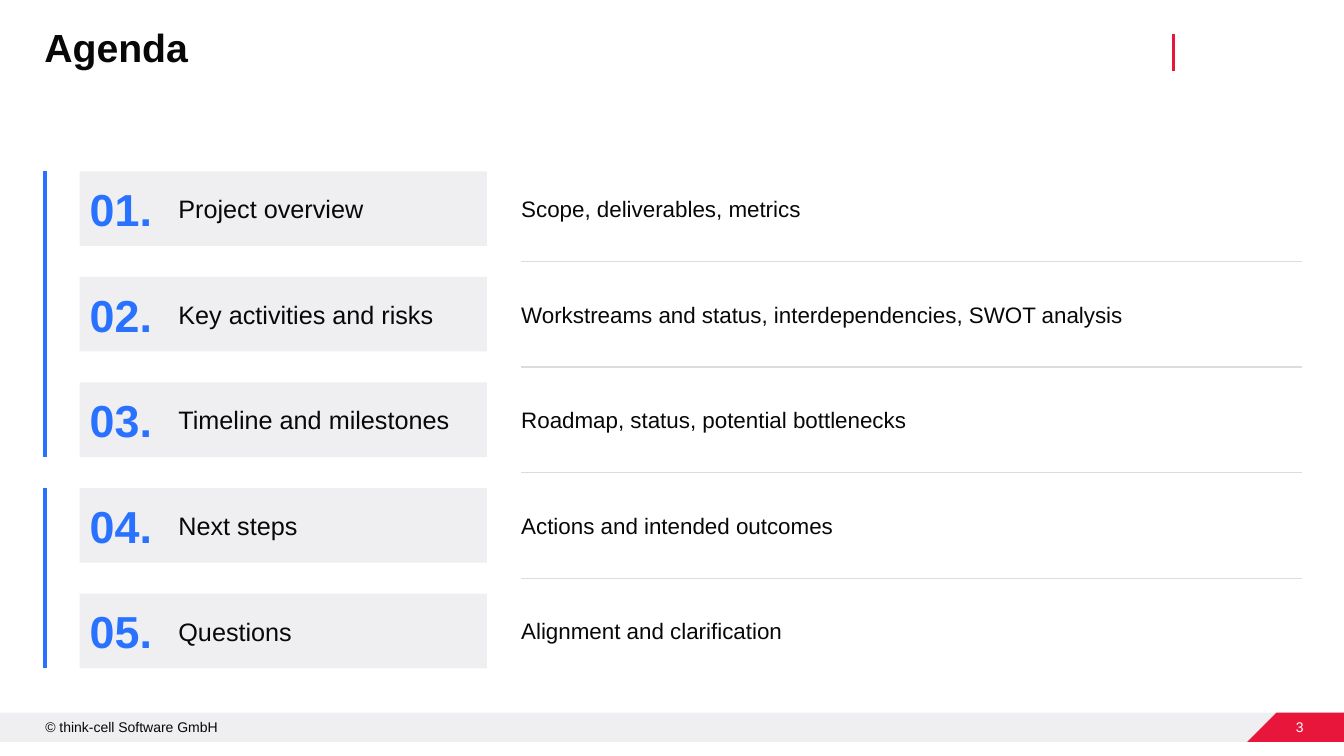
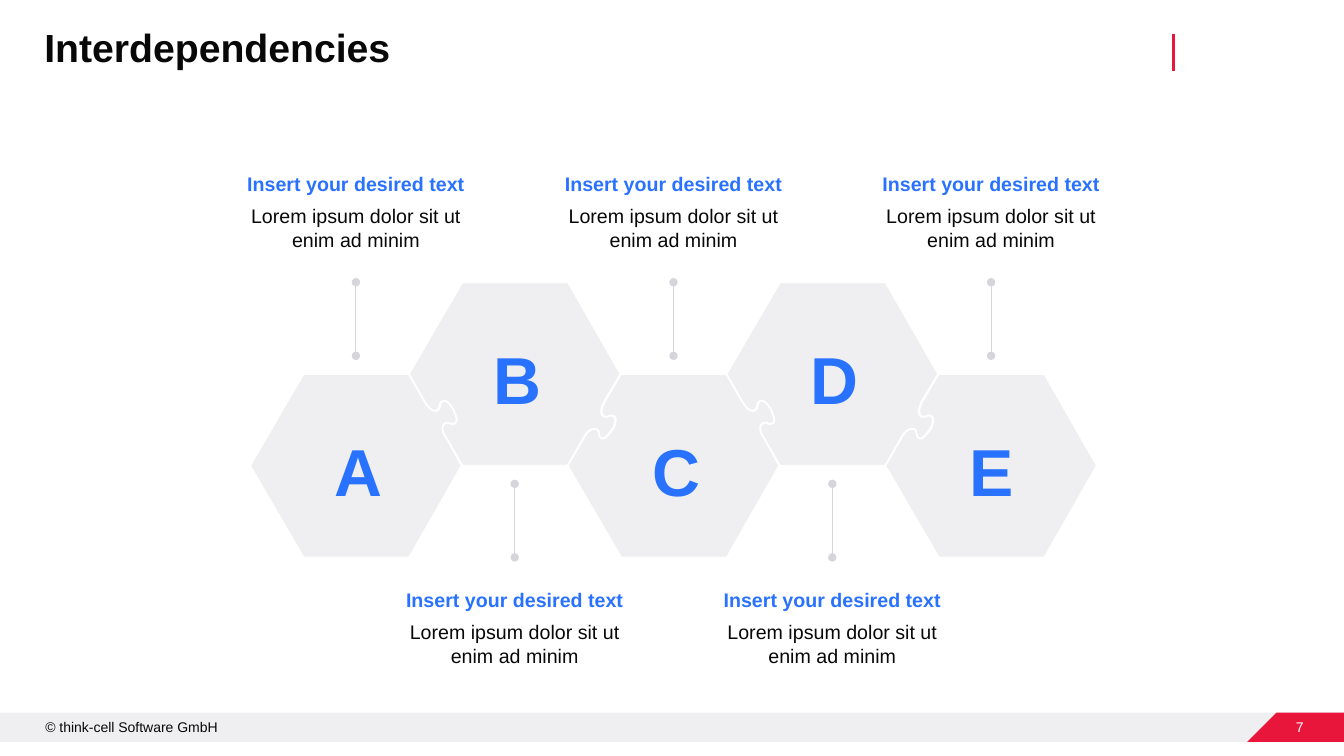
from pptx import Presentation
from pptx.dml.color import RGBColor
from pptx.enum.shapes import MSO_CONNECTOR as Link, MSO_SHAPE as Preset
from pptx.enum.text import MSO_ANCHOR as Anchor, PP_ALIGN as Align
from pptx.oxml.ns import qn
from pptx.util import Inches, Pt
from lxml.etree import SubElement

COLORS = {
    "ink": "080808",
    "blue": "2972FF",
    "red": "E9163C",
    "panel": "EFEFF1",
    "rule": "DCDCDC",
    "pin": "D5D5DB",
    "white": "FFFFFF",
}
FONT = "Arial"
WIDTH, HEIGHT = 13.33, 7.5
NO_INSETS = (0, 0, 0, 0)


def rgb(name):
    return RGBColor.from_string(COLORS[name])


class Deck:
    def __init__(self):
        self.prs = Presentation()
        self.prs.slide_width = Inches(WIDTH)
        self.prs.slide_height = Inches(HEIGHT)
        self.slide = None

    def new_slide(self, title, number):
        self.slide = self.prs.slides.add_slide(self.prs.slide_layouts[6])
        self.panel(0, 7.07, WIDTH, 0.29)
        copyright_line = self.text(0.45, 7.13, 2.46, 0.17)
        self.paragraph(copyright_line, "© think-cell Software GmbH", 10)
        self.line((11.64, 0.34), (11.64, 0.7), "red", 2.25)
        self.outline([(12.66, 7.07), (WIDTH, 7.07), (WIDTH, 7.36), (12.37, 7.36)], "red")
        page = self.text(12.76, 7.13, 0.17, 0.17, Anchor.MIDDLE, wrap=False)
        self.paragraph(page, number, 10, "white", align=Align.RIGHT)
        heading = self.text(0.44, 0.28, 11.03, 0.42)
        self.paragraph(heading, title, 28, bold=True, spacing=0.9)

    def paint(self, shape, fill, edge=None, weight=0):
        shape.shadow.inherit = False
        shape.fill.solid()
        shape.fill.fore_color.rgb = rgb(fill)
        if edge:
            shape.line.color.rgb = rgb(edge)
            shape.line.width = Pt(weight)
        else:
            shape.line.fill.background()

    def frame(self, shape, anchor, insets, wrap=True):
        frame = shape.text_frame
        frame.word_wrap = wrap
        frame.vertical_anchor = anchor
        (frame.margin_left, frame.margin_top,
         frame.margin_right, frame.margin_bottom) = map(Inches, insets)
        return frame

    def panel(self, x, y, w, h, insets=NO_INSETS):
        box = self.slide.shapes.add_shape(
            Preset.RECTANGLE, Inches(x), Inches(y), Inches(w), Inches(h))
        self.paint(box, "panel")
        return self.frame(box, Anchor.MIDDLE, insets)

    def text(self, x, y, w, h, anchor=Anchor.TOP, insets=NO_INSETS, wrap=True):
        box = self.slide.shapes.add_textbox(
            Inches(x), Inches(y), Inches(w), Inches(h))
        return self.frame(box, anchor, insets, wrap)

    def paragraph(self, frame, words, size, color="ink", bold=False, align=Align.LEFT,
                  spacing=None, after=None, tracking=None):
        first = frame.paragraphs[0]
        paragraph = frame.add_paragraph() if first.runs else first
        paragraph.alignment = align
        if spacing:
            paragraph.line_spacing = spacing
        if after:
            paragraph.space_after = Pt(after)
        run = paragraph.add_run()
        run.text = words
        run.font.name = FONT
        run.font.size = Pt(size)
        run.font.bold = bold
        run.font.color.rgb = rgb(color)
        if tracking:
            run.font._element.set("spc", str(round(tracking * 100)))

    def line(self, start, end, color, weight, dots=False):
        link = self.slide.shapes.add_connector(
            Link.STRAIGHT, *map(Inches, start + end))
        link.line.color.rgb = rgb(color)
        link.line.width = Pt(weight)
        if dots:
            stroke = link.line._get_or_add_ln()
            for tip in ("a:headEnd", "a:tailEnd"):
                SubElement(stroke, qn(tip), type="oval")
        SubElement(link._element.spPr, qn("a:effectLst"))

    def outline(self, points, fill, edge=None, weight=0):
        corners = [(Inches(x), Inches(y)) for x, y in points]
        builder = self.slide.shapes.build_freeform(*corners[0])
        builder.add_line_segments(corners[1:], close=True)
        self.paint(builder.convert_to_shape(), fill, edge, weight)


AGENDA = [
    ("Project overview", "Scope, deliverables, metrics"),
    ("Key activities and risks", "Workstreams and status, interdependencies, SWOT analysis"),
    ("Timeline and milestones", "Roadmap, status, potential bottlenecks"),
    ("Next steps", "Actions and intended outcomes"),
    ("Questions", "Alignment and clarification"),
]
ROW_TOP, ROW_HEIGHT, ROW_PITCH = 1.7, 0.74, 4.19 / 4
TOPIC_GROUPS = [(0, 2), (3, 4)]


def agenda(deck):
    deck.new_slide("Agenda", "3")
    for first, last in TOPIC_GROUPS:
        deck.line((0.45, ROW_TOP + first * ROW_PITCH),
                  (0.45, ROW_TOP + last * ROW_PITCH + ROW_HEIGHT), "blue", 3)
    for index, (topic, details) in enumerate(AGENDA):
        top = ROW_TOP + index * ROW_PITCH
        card = deck.panel(0.79, top, 4.04, ROW_HEIGHT, (0.98, 0.08, 0.24, 0.08))
        deck.paragraph(card, topic, 18)
        number = deck.text(0.89, top + (ROW_HEIGHT - 0.57) / 2, 0.73, 0.57, Anchor.MIDDLE)
        deck.paragraph(number, f"{index + 1:02}.", 32, "blue", bold=True)
        deck.paragraph(deck.text(5.17, top, 7.74, ROW_HEIGHT, Anchor.MIDDLE), details, 16)
        if index:
            rule = top - (ROW_PITCH - ROW_HEIGHT) / 2
            deck.line((5.17, rule), (12.91, rule), "rule", 0.75)


HEXAGON = [(0.53, 0), (1.58, 0), (2.1, 0.91), (1.58, 1.82), (0.53, 1.82), (0, 0.91)]
TILE_LEFT, TILE_PITCH = 2.48, 3.15 / 2
TILE_CENTER = 1.05
FALLING_KNOB = [
    (0.16, 0.28), (0.2, 0.34), (0.24, 0.38), (0.28, 0.36),
    (0.32, 0.33), (0.29, 0.3), (0.33, 0.27),
    (0.38, 0.24), (0.44, 0.35), (0.44, 0.35),
    (0.45, 0.38), (0.5, 0.46), (0.46, 0.49),
    (0.41, 0.51), (0.4, 0.47), (0.36, 0.49),
    (0.32, 0.51), (0.33, 0.58), (0.37, 0.63),
]
RISING_KNOB = [
    (-0.16, 0.27), (-0.19, 0.33), (-0.21, 0.39), (-0.17, 0.42),
    (-0.12, 0.44), (-0.11, 0.39), (-0.07, 0.42),
    (-0.03, 0.44), (-0.07, 0.53), (-0.08, 0.55),
    (-0.09, 0.55), (-0.15, 0.66), (-0.19, 0.64),
    (-0.24, 0.61), (-0.2, 0.58), (-0.24, 0.55),
    (-0.28, 0.53), (-0.33, 0.57), (-0.36, 0.62),
]


def trace(knob, origin, steps=8):
    points = [knob[0]]
    for i in range(0, len(knob) - 1, 3):
        for step in range(1, steps + 1):
            t = step / steps
            weights = ((1 - t) ** 3, 3 * t * (1 - t) ** 2, 3 * t * t * (1 - t), t ** 3)
            points.append(tuple(
                sum(w * p[axis] for w, p in zip(weights, knob[i:i + 4])) for axis in (0, 1)))
    return [(origin[0] + x, origin[1] + y) for x, y in points]


def tile_outline(raised, joined_left, joined_right):
    knobs = {}
    if raised:
        knobs[2] = trace(RISING_KNOB, HEXAGON[2])
        knobs[4] = trace(FALLING_KNOB, HEXAGON[5])[::-1]
    else:
        if joined_right:
            knobs[1] = trace(FALLING_KNOB, HEXAGON[1])
        if joined_left:
            knobs[5] = trace(RISING_KNOB, HEXAGON[0])[::-1]
    points = []
    for index, corner in enumerate(HEXAGON):
        points += [corner] + knobs.get(index, [])
    return points


def interdependencies(deck):
    deck.new_slide("Interdependencies", "7")
    letters = "ABCDE"
    for index, letter in enumerate(letters):
        raised = index % 2 == 1
        left = TILE_LEFT + index * TILE_PITCH
        center = left + TILE_CENTER
        top, pin_bottom, caption_top = (2.8, 5.53, 5.83) if raised else (3.71, 3.53, 1.7)
        outline = tile_outline(raised, index > 0, index < len(letters) - 1)
        deck.outline([(left + x, top + y) for x, y in outline], "panel", "white", 1.3)
        label = deck.text(center - 0.31, top + 0.42, 0.62, 0.97, Anchor.MIDDLE,
                          (0.1, 0.05, 0.1, 0.05), wrap=False)
        deck.paragraph(label, letter, 47.4, "blue", bold=True, align=Align.CENTER,
                       spacing=Pt(63.1), tracking=-1.3)
        caption = deck.text(center - 1.09, caption_top, 2.18, 0.79, Anchor.BOTTOM)
        deck.paragraph(caption, "Insert your desired text", 14, "blue", bold=True,
                       align=Align.CENTER, after=6)
        deck.paragraph(caption, "Lorem ipsum dolor sit ut enim ad minim", 14,
                       align=Align.CENTER, after=6)
        deck.line((center, pin_bottom), (center, pin_bottom - 0.73), "pin", 0.75, dots=True)


def main():
    deck = Deck()
    agenda(deck)
    interdependencies(deck)
    deck.prs.save("out.pptx")


if __name__ == "__main__":
    main()
